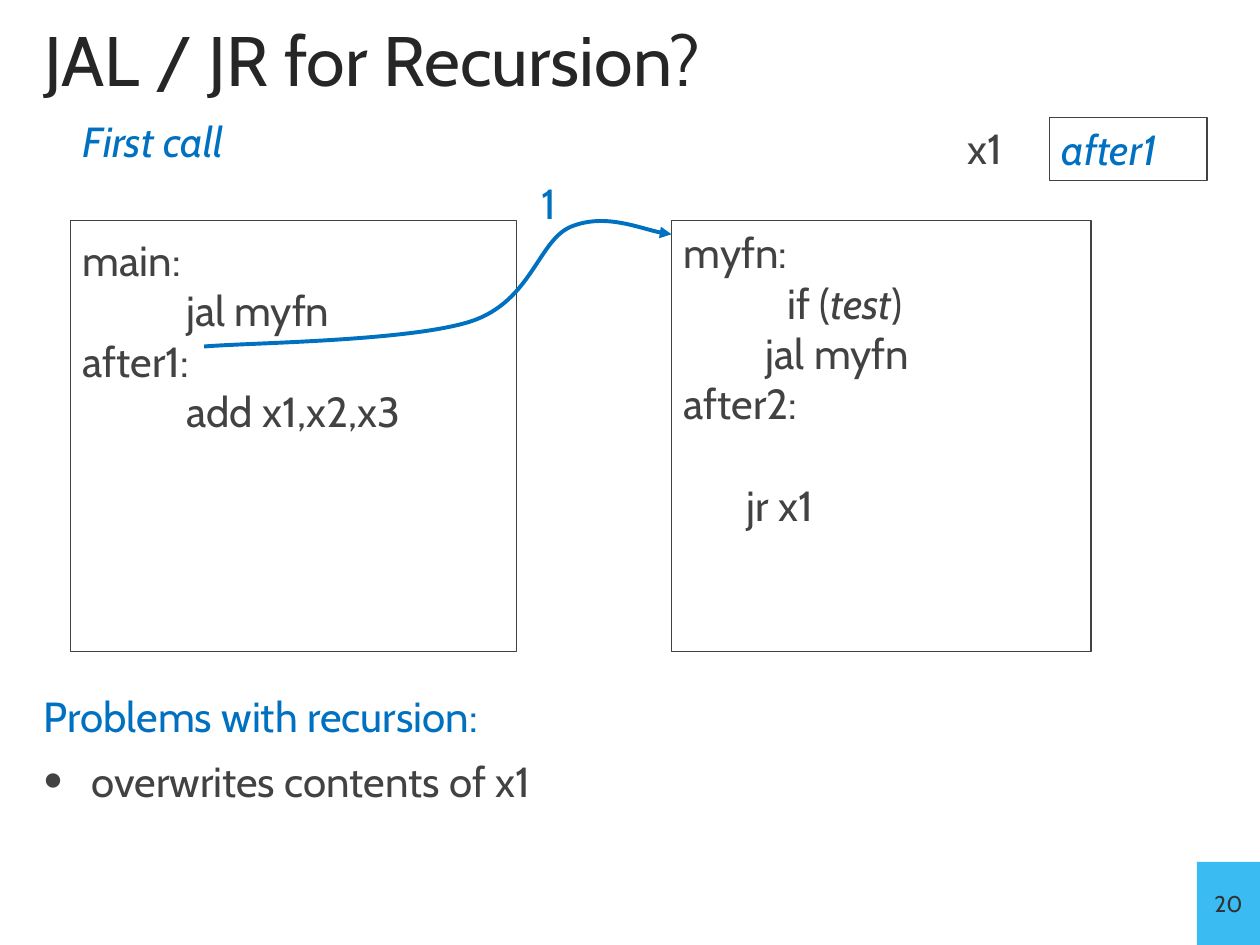
"""Build a slide showing the first jal call of a recursive function."""
from dataclasses import dataclass
from typing import Optional

import lxml.etree
import pptx
import pptx.dml.color
import pptx.enum.shapes
import pptx.enum.text
import pptx.oxml.ns
import pptx.util

qn = pptx.oxml.ns.qn
Inches, Pt = pptx.util.Inches, pptx.util.Pt
ANCHOR = pptx.enum.text.MSO_ANCHOR
ALIGN = pptx.enum.text.PP_ALIGN
WIDTH, HEIGHT = Inches(10), Inches(7.5)


@dataclass(frozen=True)
class Theme:
    font: str = "Cabin"
    ink: str = "424242"
    title: str = "262626"
    accent: str = "0070C0"
    tab: str = "3ABCF2"
    number: str = "323232"
    title_size: int = 40
    body_size: int = 24
    number_size: int = 13
    outline: float = 0.75
    arrow: float = 2.25


@dataclass(frozen=True)
class Line:
    runs: tuple[str, ...]
    indent: float = 0
    before: float = 0
    spacing: float = 1
    color: str = Theme.ink
    italic: bool = False
    bullet: bool = False


@dataclass(frozen=True)
class Box:
    """Place text in a frame given in percent of the slide."""
    frame: tuple[float, float, float, float]
    lines: tuple[Line, ...]
    outline: bool = False
    top: float = 0.05


T = Theme()
BOXES = (
    Box((5.6, 23.33, 35.4, 45.6), (
        Line(("main:",)),
        Line(("jal myfn",), indent=0.82),
        Line(("after1:",)),
        Line(("add x1,x2,x3",), indent=0.82),
    ), outline=True, top=0.11),
    Box((53.3, 23.33, 33.3, 45.6), (
        Line(("myfn:",)),
        Line(("if (", "test", ")"), indent=0.82),
        Line(("jal myfn",), indent=0.65),
        Line(("after2:",)),
        Line(("jr x1",), indent=0.5, before=29),
    ), outline=True),
    Box((2.5, 72.27, 96.7, 13.87), (
        Line(("Problems with recursion:",), spacing=1.02, color=T.accent),
        Line(("overwrites contents of x1",), indent=0.38, before=8,
             spacing=1.02, bullet=True),
    )),
    Box((42, 18.13, 3.9, 6.67), (Line(("1",), color=T.accent),)),
    Box((75.8, 12.27, 7.5, 6.67), (Line(("x1",)),)),
    Box((83.3, 12.4, 12.5, 6.67),
        (Line(("after1",), color=T.accent, italic=True),), outline=True),
    Box((5.6, 11.47, 14.6, 6.53),
        (Line(("First call",), spacing=1.02, color=T.accent, italic=True),)),
)
CURVE = (
    (16.2, 36.67),
    (19.7, 36.27), (32.5, 36.13), (37.4, 34),
    (42.2, 31.87), (42.7, 25.47), (45.3, 24),
    (48, 22.53), (51.7, 24.67), (53.3, 24.8),
)


def at(x: float, y: float) -> tuple[int, int]:
    return round(WIDTH * x / 100), round(HEIGHT * y / 100)


def rgb(color: str) -> pptx.dml.color.RGBColor:
    return pptx.dml.color.RGBColor.from_string(color)


def add_text(p, text: str, *, size: float = T.body_size, color: str = T.ink,
             italic: bool = False) -> None:
    r = p.add_run()
    r.text = text
    r.font.name, r.font.size = T.font, Pt(size)
    r.font.color.rgb, r.font.italic = rgb(color), italic


def add_rect(s, frame: tuple, *, fill: Optional[str] = None,
             line: Optional[str] = None):
    sp = s.shapes.add_shape(pptx.enum.shapes.MSO_SHAPE.RECTANGLE,
                            *at(*frame[:2]), *at(*frame[2:]))
    sp.shadow.inherit = False
    if fill:
        sp.fill.solid()
        sp.fill.fore_color.rgb = rgb(fill)
    else:
        sp.fill.background()
    if line:
        sp.line.color.rgb, sp.line.width = rgb(line), Pt(T.outline)
    else:
        sp.line.fill.background()
    return sp


def add_bullet(pPr, hanging: float) -> None:
    pPr.set("indent", str(-Inches(hanging)))
    for tag, key, value in (("a:buSzPct", "val", "126000"),
                            ("a:buFont", "typeface", "Arial"),
                            ("a:buChar", "char", "•")):
        lxml.etree.SubElement(pPr, qn(tag)).set(key, value)


def add_box(s, box: Box) -> None:
    if box.outline:
        sp = add_rect(s, box.frame, line=T.ink)
    else:
        sp = s.shapes.add_textbox(*at(*box.frame[:2]), *at(*box.frame[2:]))
    tf = sp.text_frame
    tf.word_wrap, tf.vertical_anchor = True, ANCHOR.TOP
    tf.margin_top = Inches(box.top)
    for i, line in enumerate(box.lines):
        p = tf.add_paragraph() if i else tf.paragraphs[0]
        p.alignment, p.line_spacing = ALIGN.LEFT, line.spacing
        p.space_before = Pt(line.before)
        pPr = p._p.get_or_add_pPr()
        pPr.set("marL", str(Inches(line.indent)))
        if line.bullet:
            add_bullet(pPr, line.indent)
        for j, text in enumerate(line.runs):
            add_text(p, text, color=line.color, italic=line.italic or j == 1)


def add_curve(s, points: tuple) -> None:
    builder = s.shapes.build_freeform(*at(*points[0]))
    builder.add_line_segments([at(*pt) for pt in points[1:]], close=False)
    sp = builder.convert_to_shape()
    sp.shadow.inherit = False
    sp.fill.background()
    sp.line.color.rgb, sp.line.width = rgb(T.accent), Pt(T.arrow)
    steps = list(sp._element.iter(qn("a:lnTo")))
    for i in range(0, len(steps), 3):
        bezier = lxml.etree.SubElement(steps[i].getparent(), qn("a:cubicBezTo"))
        for step in steps[i:i + 3]:
            bezier.append(step[0])
            step.getparent().remove(step)
    tail = lxml.etree.SubElement(sp.line._get_or_add_ln(), qn("a:tailEnd"))
    tail.set("type", "triangle")


def add_title(s, text: str) -> None:
    sp = s.shapes.title
    sp.left, sp.top = at(2.5, 1.2)
    sp.width, sp.height = at(95, 9.87)
    tf = sp.text_frame
    tf.auto_size = pptx.enum.text.MSO_AUTO_SIZE.NONE
    tf.vertical_anchor = ANCHOR.MIDDLE
    p = tf.paragraphs[0]
    p.alignment, p.line_spacing = ALIGN.LEFT, 1.02
    add_text(p, text, size=T.title_size, color=T.title)


def add_number(s, text: str) -> None:
    tf = add_rect(s, (95, 91.2, 5, 8.8), fill=T.tab).text_frame
    tf.margin_left = tf.margin_right = 0
    tf.vertical_anchor = ANCHOR.MIDDLE
    p = tf.paragraphs[0]
    p.alignment = ALIGN.CENTER
    add_text(p, text, size=T.number_size, color=T.number)


def main() -> None:
    prs = pptx.Presentation()
    prs.slide_width, prs.slide_height = WIDTH, HEIGHT
    s = prs.slides.add_slide(prs.slide_layouts[5])
    add_number(s, "20")
    add_title(s, "JAL / JR for Recursion?")
    for box in BOXES:
        add_box(s, box)
    add_curve(s, CURVE)
    prs.save("out.pptx")


if __name__ == "__main__":
    main()
